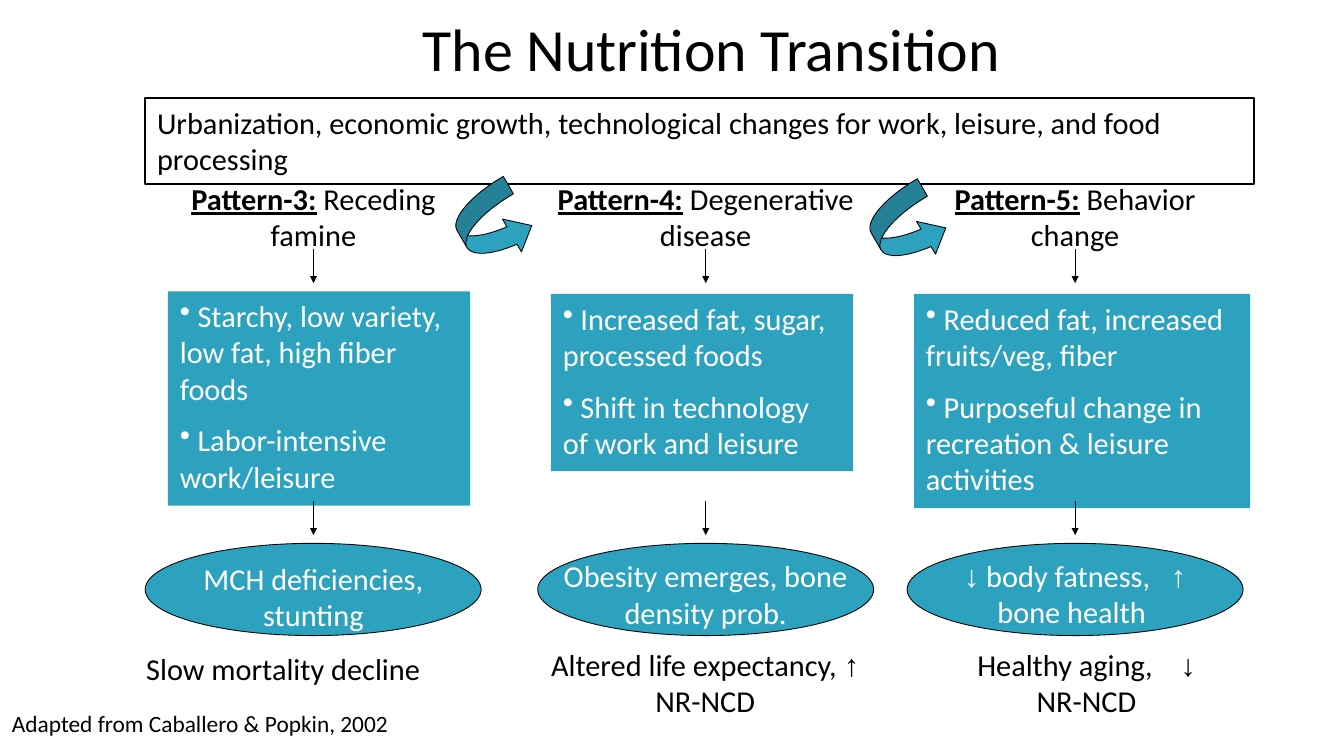
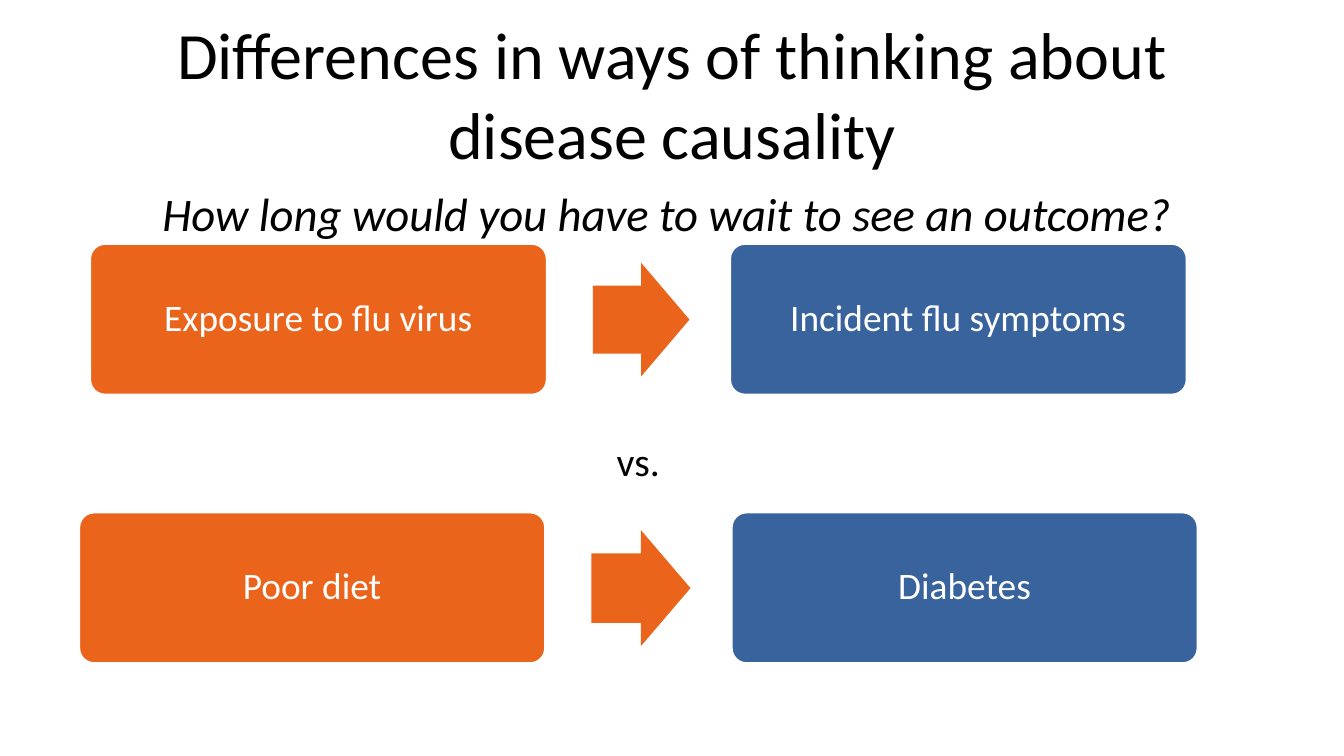
from lxml import etree
from pptx import Presentation
from pptx import util as u
from pptx.dml.color import RGBColor
from pptx.enum import shapes, text
from pptx.oxml.ns import qn

C = {"black": "000000", "white": "FFFFFF", "teal": "2DA2BF",
     "orange": "EB641B", "blue": "39639D"}
SHAPE = shapes.MSO_SHAPE
FONT, ARROW_FONT = "Calibri", "Arial"


def add_shape(s, kind, x, y, w, h, fill=None, line=None, line_w=0.75, adj=()):
    """Add a preset shape, or a text box when kind is None; lengths in cm."""
    place = [u.Cm(v) for v in (x, y, w, h)]
    if kind is None:
        return s.shapes.add_textbox(*place)
    sp = s.shapes.add_shape(kind, *place)
    sp.shadow.inherit = False
    for part, color in ((sp.fill, fill), (sp.line.fill, line)):
        if color:
            part.solid()
            part.fore_color.rgb = RGBColor.from_string(C[color])
        else:
            part.background()
    if line:
        sp.line.width = u.Pt(line_w)
    for i, value in enumerate(adj):
        sp.adjustments[i] = value
    return sp


def write(sp, *paragraphs, size=26, color="black", align="CENTER", anchor="TOP",
          italic=False, bullet=None, spacing=None):
    """Fill a shape with paragraphs, each a tuple of runs; "*" opens a heading run."""
    tf = sp.text_frame
    tf.word_wrap = True
    tf.vertical_anchor = text.MSO_ANCHOR[anchor]
    tf.margin_left = tf.margin_right = u.Cm(0.36)
    tf.margin_top = tf.margin_bottom = u.Cm(0.18)
    for i, runs in enumerate(paragraphs):
        p = tf.add_paragraph() if i else tf.paragraphs[0]
        p.alignment = text.PP_ALIGN[align]
        p.line_spacing = spacing
        if i:
            p.space_before = u.Pt(size / 2)
        if bullet:
            etree.SubElement(p._p.get_or_add_pPr(), qn("a:buChar")).set("char", bullet)
        for words in runs:
            r = p.add_run()
            r.text = words.lstrip("*")
            r.font.name = ARROW_FONT if words in "↑↓" else FONT
            r.font.size = u.Pt(size)
            r.font.color.rgb = RGBColor.from_string(C[color])
            r.font.italic = italic
            r.font.bold = r.font.underline = words.startswith("*")


prs = Presentation()
prs.slide_width, prs.slide_height = u.Cm(40.64), u.Cm(22.86)
blank = prs.slide_layouts[6]

# Slide 1: three dietary patterns side by side
s = prs.slides.add_slide(blank)
write(add_shape(s, None, 4.75, 0.43, 33.53, 2.03), ("The Nutrition Transition",),
      size=51.3, anchor="MIDDLE")

# centre, heading, heading width, box (x, y, w, h), bullets,
# ellipse x, effect, effect y, outcome, outcome (x, width, alignment)
columns = [
    (9.48, ("*Pattern-3:", " Receding famine"), 8.81, (5.08, 8.81, 9.14, 6.48),
     (" Starchy, low variety, low fat, high fiber foods", " Labor-intensive work/leisure"),
     4.39, ("MCH deficiencies, stunting",), 16.76,
     ("Slow mortality decline",), (4.06, 10.85, "LEFT")),
    (21.34, ("*Pattern-4:", " Degenerative disease"), 10.85, (16.66, 8.89, 9.14, 5.36),
     (" Increased fat, sugar, processed foods", " Shift in technology of work and leisure"),
     16.26, ("Obesity emerges, bone density prob.",), 16.68,
     ("Altered life expectancy, ", "↑", " NR-NCD"), (15.57, 11.51, "CENTER")),
    (32.51, ("*Pattern-5:", " Behavior change"), 8.81, (27.64, 8.89, 10.16, 6.48),
     (" Reduced fat, increased fruits/veg, fiber",
      " Purposeful change in recreation & leisure activities"),
     27.43, ("↓", " body fatness,   ", "↑", " bone health "), 16.66,
     ("Healthy aging,    ", "↓", " NR-NCD"), (28.45, 8.81, "CENTER")),
]
for (cx, heading, heading_w, box, bullets, ellipse_x, effect, effect_y,
     outcome, (out_x, out_w, out_align)) in columns:
    write(add_shape(s, None, cx - heading_w / 2, 5.26, heading_w, 2.59), heading)
    write(add_shape(s, SHAPE.RECTANGLE, *box, fill="teal"), *[(b,) for b in bullets],
          color="white", align="LEFT", bullet="•")
    add_shape(s, SHAPE.OVAL, ellipse_x, 16.43, 10.16, 2.79, fill="teal", line="black")
    effect_w = 9.83 if cx == 21.34 else 8.81
    write(add_shape(s, None, cx - effect_w / 2, effect_y, effect_w, 2.59), effect,
          color="white")
    outcome_y = 19.48 if out_align == "LEFT" else 19.35
    write(add_shape(s, None, out_x, outcome_y, out_w, 2.59), outcome, align=out_align)
    for top in (7.54, 15.16):
        arrow = s.shapes.add_connector(shapes.MSO_CONNECTOR.STRAIGHT, u.Cm(cx), u.Cm(top),
                                       u.Cm(cx), u.Cm(top + 1.02))
        arrow.line.width = u.Pt(0.75)
        arrow.line.color.rgb = RGBColor.from_string(C["black"])
        etree.SubElement(arrow.line._get_or_add_ln(), qn("a:tailEnd")).set("type", "triangle")
        etree.SubElement(arrow._element.spPr, qn("a:effectLst"))

write(add_shape(s, SHAPE.RECTANGLE, 4.39, 2.97, 33.53, 2.59, line="black", line_w=2),
      ("Urbanization, economic growth, technological changes for work, leisure, "
       "and food processing",), align="LEFT")
for x, y in ((13.77, 5.82), (26.29, 5.89)):
    curve = add_shape(s, SHAPE.CURVED_UP_ARROW, x, y, 2.29, 2.03, fill="teal",
                      line="black", adj=(0.3, 0.6, 0.33))
    curve.rotation = 59.9
write(add_shape(s, None, 0, 21.26, 17.6, 1.22), ("Adapted from Caballero & Popkin, 2002",),
      size=20, align="LEFT")

# Slide 2: two cause-and-effect rows
s = prs.slides.add_slide(blank)
write(add_shape(s, None, 2.03, 0.91, 36.58, 3.81),
      ("Differences in ways of thinking about disease causality",),
      size=56.7, anchor="MIDDLE")
write(add_shape(s, None, 0.69, 5.41, 38.94, 1.78),
      ("How long would you have to wait to see an outcome?",), size=40, italic=True)

# cause, effect, row top, box width, cause x, effect x, arrow (x, y, w, h)
rows = [
    ("Exposure to flu virus", "Incident flu symptoms", 7.37, 13.82, 2.72, 22.07,
     (17.93, 7.95, 2.92, 3.43)),
    ("Poor diet", "Diabetes", 15.49, 14.1, 2.39, 22.12, (17.88, 16.03, 3, 3.51)),
]
for cause, effect, top, width, cause_x, effect_x, arrow in rows:
    for words, x, fill in ((cause, cause_x, "orange"), (effect, effect_x, "blue")):
        write(add_shape(s, SHAPE.ROUNDED_RECTANGLE, x, top, width, 4.57, fill=fill,
                        line="white", line_w=2, adj=(0.1,)),
              (words,), size=32, color="white", anchor="MIDDLE", spacing=0.9)
    add_shape(s, SHAPE.RIGHT_ARROW, *arrow, fill="orange", adj=(0.6, 0.5))
write(add_shape(s, None, 2.03, 13.03, 34.54, 1.78), ("vs.",), size=34)

prs.save("out.pptx")
